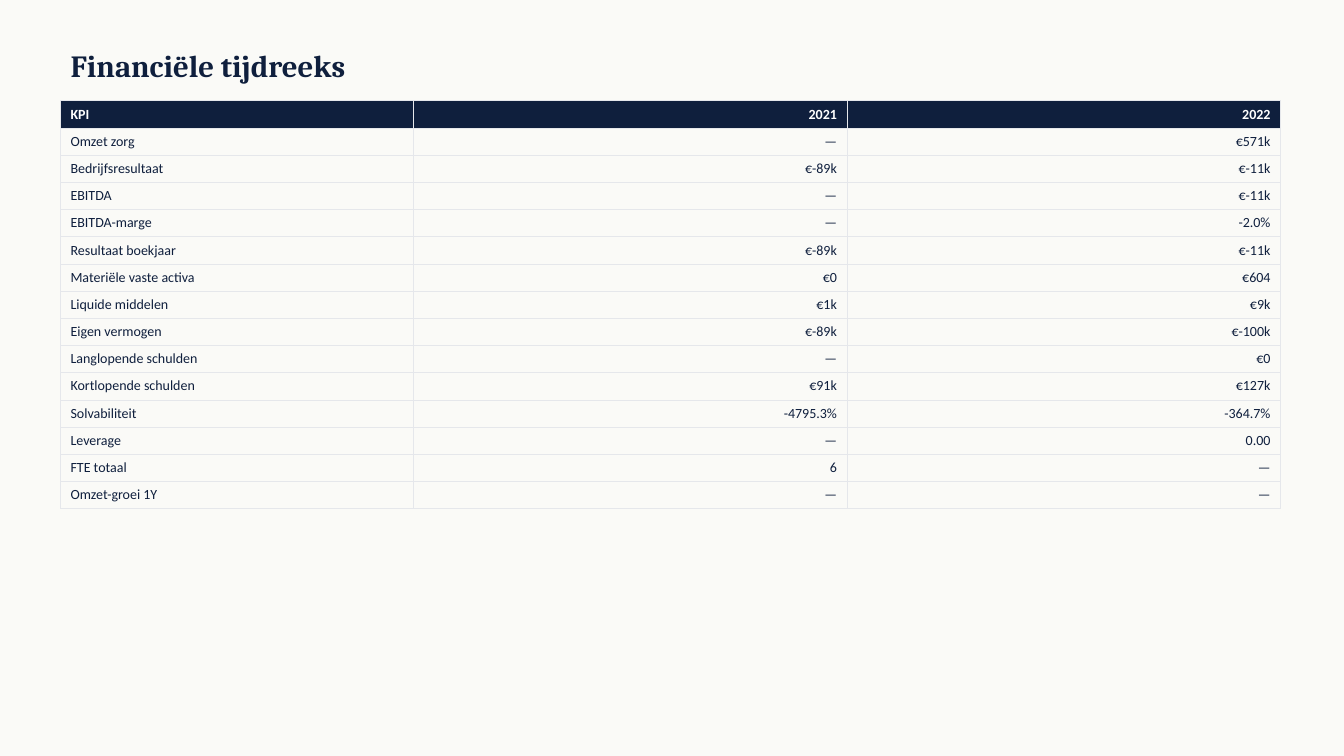
from pptx import Presentation
from pptx.dml.color import RGBColor
from pptx.enum.text import MSO_ANCHOR as Anchor, PP_ALIGN as Align
from pptx.oxml import parse_xml
from pptx.oxml.ns import nsdecls, qn
from pptx.util import Pt

EMU_PER_PX = 9144
NAVY = RGBColor(0x0F, 0x1F, 0x3D)
WHITE = RGBColor(0xFF, 0xFF, 0xFF)
PAPER = RGBColor(0xFA, 0xFA, 0xF7)
RULE = RGBColor(0xE5, 0xE7, 0xEB)
PLAIN_TABLE_STYLE = "{2D5ABB26-0587-4C30-8999-92F81FD0307C}"

KPI_ROWS = [
    ("KPI", "2021", "2022"),
    ("Omzet zorg", "—", "€571k"),
    ("Bedrijfsresultaat", "€-89k", "€-11k"),
    ("EBITDA", "—", "€-11k"),
    ("EBITDA-marge", "—", "-2.0%"),
    ("Resultaat boekjaar", "€-89k", "€-11k"),
    ("Materiële vaste activa", "€0", "€604"),
    ("Liquide middelen", "€1k", "€9k"),
    ("Eigen vermogen", "€-89k", "€-100k"),
    ("Langlopende schulden", "—", "€0"),
    ("Kortlopende schulden", "€91k", "€127k"),
    ("Solvabiliteit", "-4795.3%", "-364.7%"),
    ("Leverage", "—", "0.00"),
    ("FTE totaal", "6", "—"),
    ("Omzet-groei 1Y", "—", "—"),
]


def px(length):
    """Turn whole pixels into EMU."""
    return length * EMU_PER_PX


class SlideBuilder:
    """Hold the style and the current slide."""

    heading_font = "Cambria"
    body_font = "Calibri"

    def __init__(self, presentation):
        """Add a title-only slide with the paper background."""
        self.slide = presentation.slides.add_slide(presentation.slide_layouts[5])
        fill = self.slide.background.fill
        fill.solid()
        fill.fore_color.rgb = PAPER

    def set_text(self, text_frame, text, font_name, size, color, bold, align):
        """Put one formatted paragraph in a text frame."""
        text_frame.text = text
        paragraph = text_frame.paragraphs[0]
        paragraph.alignment = align
        font = paragraph.runs[0].font
        font.name, font.size, font.bold = font_name, Pt(size), bold
        font.color.rgb = color

    def title(self, text, left, top, width, height):
        """Place and format the title placeholder."""
        shape = self.slide.shapes.title
        shape.left, shape.top = px(left), px(top)
        shape.width, shape.height = px(width), px(height)
        shape.text_frame.vertical_anchor = Anchor.MIDDLE
        self.set_text(shape.text_frame, text, self.heading_font, 22, NAVY, True, Align.LEFT)

    def borders(self, cell):
        """Draw a thin rule on all four sides of a cell."""
        properties = cell._tc.get_or_add_tcPr()
        for side in ("lnL", "lnR", "lnT", "lnB"):
            properties.append(parse_xml(
                f'<a:{side} {nsdecls("a")} w="{Pt(0.5)}"><a:solidFill>'
                f'<a:srgbClr val="{RULE}"/></a:solidFill></a:{side}>'))

    def table(self, rows, left, top, column_widths, row_height):
        """Add a table with a dark header and right-aligned figures."""
        frame = self.slide.shapes.add_table(
            len(rows), len(column_widths), px(left), px(top),
            px(sum(column_widths)), px(row_height * len(rows)))
        table = frame.table
        table.horz_banding = False
        table._tbl.tblPr.find(qn("a:tableStyleId")).text = PLAIN_TABLE_STYLE
        for column, width in zip(table.columns, column_widths):
            column.width = px(width)
        for row_index, values in enumerate(rows):
            table.rows[row_index].height = px(row_height)
            header = row_index == 0
            for column_index, value in enumerate(values):
                cell = table.cell(row_index, column_index)
                self.borders(cell)
                if header:
                    cell.fill.solid()
                    cell.fill.fore_color.rgb = NAVY
                else:
                    cell.fill.background()
                self.set_text(cell.text_frame, value, self.body_font, 10,
                              WHITE if header else NAVY, header,
                              Align.RIGHT if column_index else Align.LEFT)


def main():
    """Build and save the slide."""
    presentation = Presentation()
    presentation.slide_width, presentation.slide_height = px(1333), px(750)
    builder = SlideBuilder(presentation)
    builder.title("Financiële tijdreeks", 60, 40, 1200, 50)
    builder.table(KPI_ROWS, 60, 100, (350, 430, 430), 27)
    presentation.save("out.pptx")


if __name__ == "__main__":
    main()
